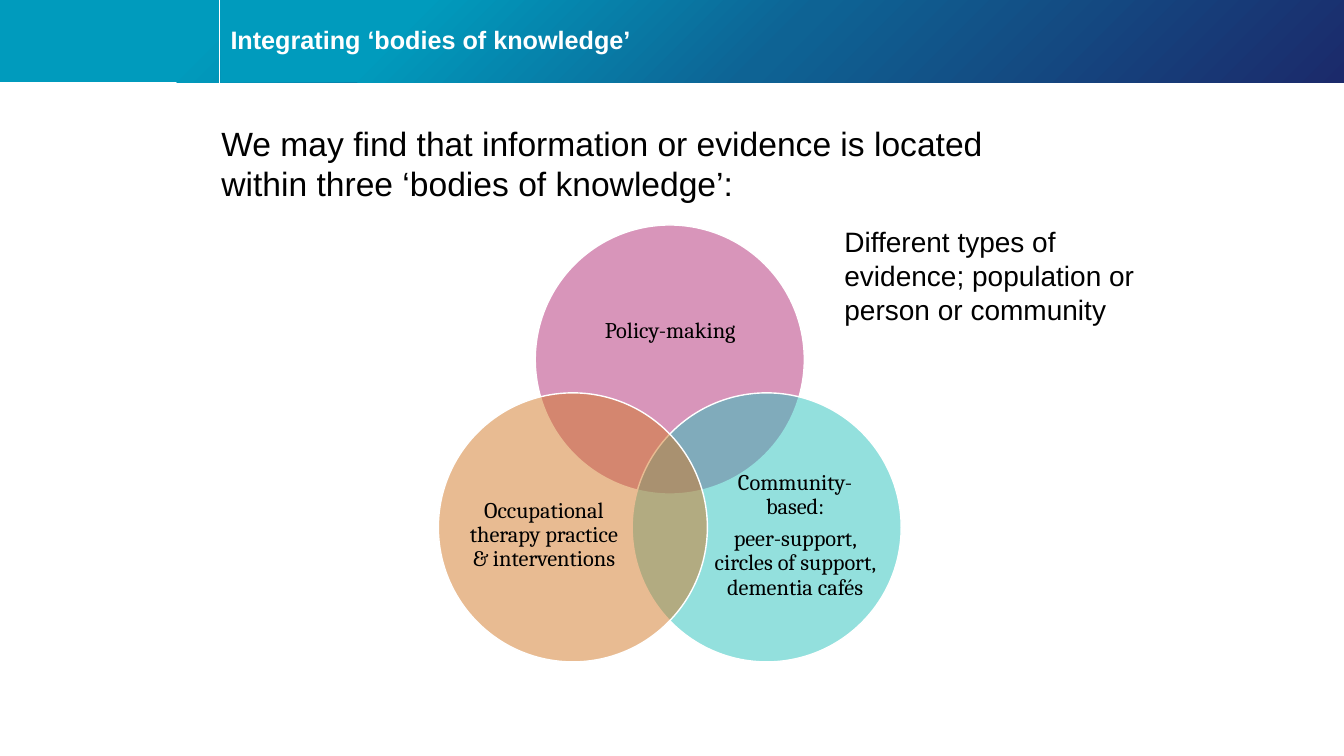
"""Build a slide with a header band and a Venn diagram of three bodies of knowledge."""
import copy
import math

import pptx
import pptx.dml.color
import pptx.enum.shapes
import pptx.enum.text
import pptx.oxml
import pptx.oxml.ns
import pptx.util

Cm = pptx.util.Cm
Pt = pptx.util.Pt
ALIGN = pptx.enum.text.PP_ALIGN
ANCHOR = pptx.enum.text.MSO_ANCHOR
SHAPE = pptx.enum.shapes.MSO_SHAPE

HUES = {
    "white": "FFFFFF", "black": "000000",
    "teal": "009BBD", "blue": "0E6394", "navy": "1B2A6B",
    "pink": "B32C76", "aqua": "29C2BD", "orange": "D27826",
}
WIDE, HIGH = 33.87, 19.05
BAND, EDGE = 2.08, 5.56
MID = (16.88, 11.88)
REACH, SIZE = 2.82, 6.78


def hue(name):
    """Return the named colour."""
    return pptx.dml.color.RGBColor.from_string(HUES[name])


def add_band(slide, left):
    """Add a header band with a diagonal gradient up to the right edge."""
    band = slide.shapes.add_shape(
        SHAPE.RECTANGLE, Cm(left), Cm(0), Cm(WIDE - left), Cm(BAND))
    band.shadow.inherit = False
    band.line.fill.background()
    band.fill.gradient()
    band.fill.gradient_angle = 315
    stops = band._element.spPr.find(".//" + pptx.oxml.ns.qn("a:gsLst"))
    stops.append(copy.deepcopy(stops[-1]))
    tones = ((0.17, "teal"), (0.5, "blue"), (1, "navy"))
    for stop, (place, name) in zip(band.fill.gradient_stops, tones):
        stop.position = place
        stop.color.rgb = hue(name)


def add_rule(slide):
    """Add the thin white upright line in the header."""
    rule = slide.shapes.add_connector(
        pptx.enum.shapes.MSO_CONNECTOR.STRAIGHT,
        Cm(5.54), Cm(0), Cm(5.54), Cm(2.49))
    rule.line.color.rgb = hue("white")
    rule.line.width = Pt(0.5)
    rule._element.spPr.append(pptx.oxml.parse_xml(
        "<a:effectLst %s/>" % pptx.oxml.ns.nsdecls("a")))


def add_text(slide, area, words, size, font="Arial", tone="black", bold=False):
    """Add a wrapped text box and return its frame."""
    frame = slide.shapes.add_textbox(*map(Cm, area)).text_frame
    frame.word_wrap = True
    frame.text = words
    for para in frame.paragraphs:
        for run in para.runs:
            run.font.name = font
            run.font.size = Pt(size)
            run.font.bold = bold
            run.font.color.rgb = hue(tone)
    return frame


def add_title(slide, words):
    """Add the white title on the header band."""
    frame = add_text(slide, (EDGE, 0.08, 28.3, 1.93), words, 18,
                     tone="white", bold=True)
    frame.vertical_anchor = ANCHOR.MIDDLE
    frame.paragraphs[0].line_spacing = 0.9


def add_note(slide, area, words, size):
    """Add a plain text box that grows with its text."""
    frame = add_text(slide, area, words, size)
    frame.auto_size = pptx.enum.text.MSO_AUTO_SIZE.SHAPE_TO_FIT_TEXT


def add_disc(slide, turn, name):
    """Add a half-clear circle at an angle around the centre of the diagram."""
    left = MID[0] + REACH * math.cos(math.radians(turn)) - SIZE / 2
    top = MID[1] + REACH * math.sin(math.radians(turn)) - SIZE / 2
    disc = slide.shapes.add_shape(
        SHAPE.OVAL, Cm(left), Cm(top), Cm(SIZE), Cm(SIZE))
    disc.shadow.inherit = False
    disc.fill.solid()
    disc.fill.fore_color.rgb = hue(name)
    tint = disc._element.spPr.find(".//" + pptx.oxml.ns.qn("a:srgbClr"))
    tint.append(pptx.oxml.parse_xml(
        '<a:alpha %s val="50000"/>' % pptx.oxml.ns.nsdecls("a")))
    disc.line.color.rgb = hue("white")
    disc.line.width = Pt(1)


def add_label(slide, area, words):
    """Add a centred label without margins."""
    frame = add_text(slide, area, words, 16, "Cambria")
    frame.vertical_anchor = ANCHOR.MIDDLE
    frame.margin_left = frame.margin_right = 0
    frame.margin_top = frame.margin_bottom = 0
    for para in frame.paragraphs:
        para.alignment = ALIGN.CENTER
        para.line_spacing = 0.9
        para.space_after = Pt(5.6)


def main():
    """Build and save the slide."""
    deck = pptx.Presentation()
    deck.slide_width, deck.slide_height = Cm(WIDE), Cm(HIGH)
    slide = deck.slides.add_slide(deck.slide_layouts[6])

    add_band(slide, 0)
    add_rule(slide)
    add_band(slide, EDGE)
    add_title(slide, "Integrating ‘bodies of knowledge’")
    add_note(slide, (5.33, 2.97, 21.69, 2.31),
             "We may find that information or evidence is located "
             "within three ‘bodies of knowledge’:", 24)

    bodies = (
        (-90, "pink", (14.4, 6.83, 4.98, 3.05), "Policy-making"),
        (30, "aqua", (18.01, 11.63, 4.06, 3.73),
         "Community-based:\n"
         "peer-support, circles of support, dementia cafés"),
        (150, "orange", (11.68, 11.63, 4.06, 3.73),
         "Occupational therapy practice & interventions"),
    )
    for turn, name, area, words in bodies:
        add_disc(slide, turn, name)
        add_label(slide, area, words)

    add_note(slide, (21.03, 5.54, 8.2, 2.82),
             "Different types of evidence; "
             "population or person or community", 20)
    deck.save("out.pptx")


if __name__ == "__main__":
    main()
